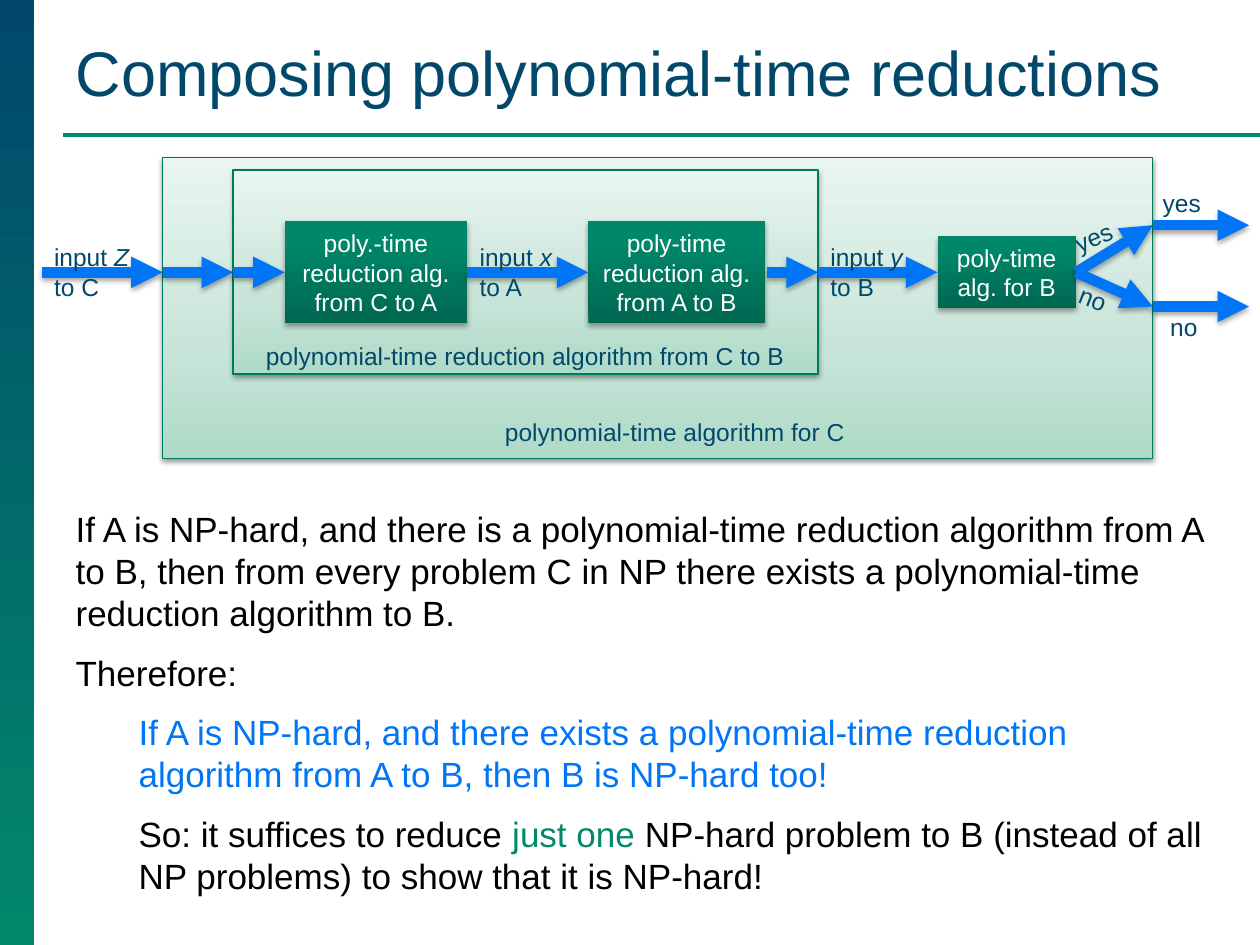
import copy
from collections import namedtuple

import lxml.etree
import pptx
import pptx.dml.color
import pptx.enum.shapes
import pptx.enum.text
import pptx.oxml
import pptx.oxml.ns
import pptx.util

Cm, Pt = pptx.util.Cm, pptx.util.Pt
RGB = pptx.dml.color.RGBColor
Align = pptx.enum.text.PP_ALIGN
Anchor = pptx.enum.text.MSO_ANCHOR
Size = pptx.enum.text.MSO_AUTO_SIZE
qn = pptx.oxml.ns.qn
Box = namedtuple("Box", "x y w h")

NAVY = RGB(0x01, 0x48, 0x6B)
GREEN = RGB(0x02, 0x88, 0x6B)
EDGE = RGB(0x00, 0x7A, 0x5F)
BLUE = RGB(0x00, 0x75, 0xF6)
BLACK = RGB(0x00, 0x00, 0x00)
WHITE = RGB(0xFF, 0xFF, 0xFF)
SIDE = [(0, NAVY), (1, GREEN)]
PALE = [(0, RGB(0xAE, 0xDA, 0xC7)), (0.35, RGB(0xC7, 0xE4, 0xD8)),
        (1, RGB(0xE9, 0xF5, 0xF0))]
DARK = [(0, RGB(0x00, 0x67, 0x51)), (0.8, RGB(0x00, 0x86, 0x69)),
        (1, RGB(0x00, 0x86, 0x69))]


def shade(item, alpha=0, dist=1.8):
    """Give a drop shadow, or none at all when alpha is 0."""
    drop = (f'<a:outerShdw blurRad="{Pt(3.1)}" dist="{Pt(dist)}" dir="5400000" '
            f'rotWithShape="0"><a:srgbClr val="000000"><a:alpha val="{alpha * 1000}"/>'
            '</a:srgbClr></a:outerShdw>') if alpha else ""
    item._element.spPr.append(pptx.oxml.parse_xml(
        f'<a:effectLst {pptx.oxml.ns.nsdecls("a")}>{drop}</a:effectLst>'))


def write(para, text, size=14, color=NAVY, italic=False, align=None, gap=0):
    """Add a run to a paragraph and set the paragraph's format."""
    para.space_before = Pt(gap)
    para.alignment = align
    run = para.add_run()
    run.text = text
    font = run.font
    font.name, font.size, font.italic = "Arial", Pt(size), italic
    font.color.rgb = color


def panel(slide, box, stops, angle=90, edge=None, alpha=0, dist=1.8):
    """Draw a rectangle with a gradient."""
    shape = slide.shapes.add_shape(
        pptx.enum.shapes.MSO_SHAPE.RECTANGLE, *map(Cm, box))
    shape.fill.gradient()
    shape.fill.gradient_angle = angle
    chain = shape._element.spPr.find(".//" + qn("a:gsLst"))
    for _ in stops[2:]:
        chain.append(copy.deepcopy(chain[0]))
    for stop, (place, color) in zip(shape.fill.gradient_stops, stops):
        stop.position = place
        stop.color.rgb = color
    if edge:
        shape.line.color.rgb = edge
        shape.line.width = Pt(0.75)
    else:
        shape.line.fill.background()
    shade(shape, alpha, dist)
    return shape


def line(slide, start, end, color, width):
    link = slide.shapes.add_connector(
        pptx.enum.shapes.MSO_CONNECTOR.STRAIGHT, *map(Cm, start + end))
    link.line.color.rgb = color
    link.line.width = Pt(width)
    return link


def arrow(slide, start, end):
    link = line(slide, start, end, BLUE, 6)
    lxml.etree.SubElement(link.line._get_or_add_ln(), qn("a:tailEnd"), type="triangle")
    shade(link, 35)


def label(slide, box, *runs, turn=0, wrap=False):
    """Add a text box; each run is a (text, italic) pair."""
    shape = slide.shapes.add_textbox(*map(Cm, box))
    shape.rotation = turn
    shape.text_frame.word_wrap = wrap
    for text, italic in runs:
        write(shape.text_frame.paragraphs[0], text, italic=italic)


def frame(slide, page):
    """Draw the side bar and the rule under the title."""
    panel(slide, Box(page.x, page.y, 0.69, page.h), SIDE, angle=270)
    rule = line(slide, (page.x + 1.27, 2.72), (page.x + page.w, 2.72), GREEN, 2.25)
    shade(rule)


def place(shape, box):
    shape.left, shape.top, shape.width, shape.height = map(Cm, box)
    text = shape.text_frame
    text.word_wrap = True
    text.auto_size = Size.NONE
    return text


def title(shape, box):
    text = place(shape, box)
    text.vertical_anchor = Anchor.BOTTOM
    write(text.paragraphs[0], "Composing polynomial-time reductions",
          size=36, align=Align.LEFT)


def diagram(slide, box):
    """Draw the chain of reductions, with the flow along one axis."""
    def at(x, y):
        return box.x + x, box.y + y

    axis, fork, edge = 2.31, 20.85, 22.4
    for x, y, w, h in [(2.44, 0, 19.96, 6.07), (3.86, 0.25, 11.79, 4.11)]:
        panel(slide, Box(*at(x, y), w, h), PALE, edge=EDGE, alpha=38, dist=1.6)

    steps = [(4.9, 3.68, 2.06, "poly.-time reduction alg. from C to A"),
             (11.02, 3.56, 2.06, "poly-time reduction alg. from A to B"),
             (18.06, 2.79, 1.45, "poly-time alg. for B")]
    for x, w, h, words in steps:
        step = panel(slide, Box(*at(x, axis - h / 2), w, h), DARK, alpha=35)
        step.text_frame.word_wrap = True
        write(step.text_frame.paragraphs[0], words, color=WHITE, align=Align.CENTER)

    for x, end in [(0, 2.44), (2.44, 3.86), (3.86, 4.9), (8.58, 11.02),
                   (14.63, 15.65), (15.65, 18.06)]:
        arrow(slide, at(x, axis), at(end, axis))
    for x, name, goal in [(0, "Z", "C"), (8.58, "x", "A"), (15.65, "y", "B")]:
        label(slide, Box(*at(x, 1.58), 2.4, 1.45), ("input ", False),
              (name, True), (" to " + goal, False), wrap=True)

    exits = [("yes", 1.32, 1.36, 337.5, (20.57, 1.16), (22.35, 0.48)),
             ("no", 1.07, 3, 21.2, (20.67, 2.41), (22.5, 2.99))]
    for word, w, y, turn, near, far in exits:
        arrow(slide, at(fork, axis), at(edge, y))
        arrow(slide, at(edge, y), at(24.34, y))
        label(slide, Box(*at(*near), w, 0.86), (word, False), turn=turn)
        label(slide, Box(*at(*far), w, 0.86), (word, False))

    label(slide, Box(*at(4.27, 3.58), 11.05, 0.86),
          ("polynomial-time reduction algorithm from C to B", False))
    label(slide, Box(*at(9.09, 5.1), 7.42, 0.86),
          ("polynomial-time algorithm for C", False))


def body(shape, box):
    text = place(shape, box)
    items = [
        (0, [("If A is NP-hard, and there is a polynomial-time reduction algorithm "
              "from A to B, then from every problem C in NP there exists a "
              "polynomial-time reduction algorithm to B.", BLACK)]),
        (0, [("Therefore:", BLACK)]),
        (1, [("If A is NP-hard, and there exists a polynomial-time reduction "
              "algorithm from A to B, then B is NP-hard too!", BLUE)]),
        (1, [("So: it suffices to reduce ", BLACK), ("just one ", GREEN),
             ("NP-hard problem to B (instead of all NP problems) to show that "
              "it is NP-hard!", BLACK)]),
    ]
    for spot, (level, runs) in enumerate(items):
        para = text.add_paragraph() if spot else text.paragraphs[0]
        para.level = level
        props = para._p.get_or_add_pPr()
        props.set("marL", str(Cm(1.27 * level)))
        props.set("indent", "0")
        lxml.etree.SubElement(props, qn("a:buNone"))
        for words, color in runs:
            write(para, words, size=20, color=color, align=Align.LEFT,
                  gap=10 if spot else 0)


def main():
    deck = pptx.Presentation()
    page = Box(0, 0, 25.4, 19.05)
    deck.slide_width, deck.slide_height = Cm(page.w), Cm(page.h)
    slide = deck.slides.add_slide(deck.slide_layouts[1])
    frame(slide, page)
    title(slide.shapes.title, Box(1.27, 0.53, 23.57, 1.8))
    diagram(slide, Box(0.84, 3.18, 24.34, 6.07))
    body(slide.placeholders[1], Box(1.27, 10.11, 23.6, 8.38))
    deck.save("out.pptx")


if __name__ == "__main__":
    main()
